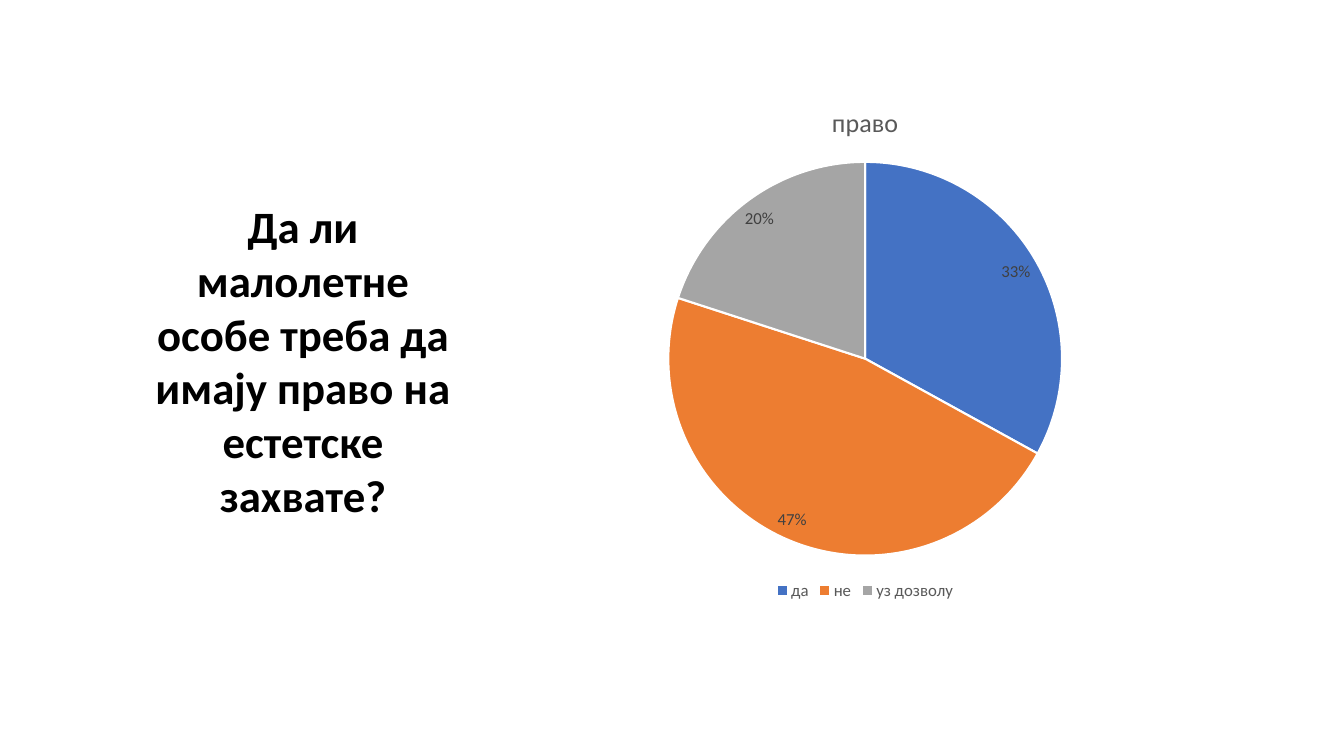
from dataclasses import dataclass

from pptx import Presentation
from pptx import util as u
from pptx.chart.data import CategoryChartData
from pptx.dml.color import RGBColor
from pptx.enum import chart as charts, text


@dataclass(frozen=True)
class Theme:
    font: str = "Calibri"
    ink: str = "000000"
    muted: str = "595959"
    label: str = "404040"
    border: str = "FFFFFF"
    slices: tuple = ("4472C4", "ED7D31", "A5A5A5")
    question_size: float = 32
    title_size: float = 18.6
    chart_size: float = 12


THEME = Theme()


def style_font(font, size, color, bold=False):
    font.name = THEME.font
    font.size = u.Pt(size)
    font.bold = bold
    font.color.rgb = RGBColor.from_string(color)


def add_text(page, content, *, left, top, width, height, size, color, bold=False,
             align=text.PP_ALIGN.LEFT):
    box = page.shapes.add_textbox(u.Pt(left), u.Pt(top), u.Pt(width), u.Pt(height))
    frame = box.text_frame
    frame.word_wrap = True
    frame.auto_size = text.MSO_AUTO_SIZE.SHAPE_TO_FIT_TEXT
    para = frame.paragraphs[0]
    para.alignment = align
    span = para.add_run()
    span.text = content
    style_font(span.font, size, color, bold)


def add_pie(page, title, shares, *, left, top, width, height):
    data = CategoryChartData(number_format="0%")
    data.categories = list(shares)
    data.add_series(title, list(shares.values()))
    chart = page.shapes.add_chart(charts.XL_CHART_TYPE.PIE, u.Pt(left), u.Pt(top),
                                  u.Pt(width), u.Pt(height), data).chart
    style_font(chart.font, THEME.chart_size, THEME.muted)

    chart.has_title = True
    chart.chart_title.include_in_layout = False
    heading = chart.chart_title.text_frame
    heading.text = title
    style_font(heading.paragraphs[0].runs[0].font, THEME.title_size, THEME.muted)

    chart.has_legend = True
    chart.legend.position = charts.XL_LEGEND_POSITION.BOTTOM
    chart.legend.include_in_layout = False
    style_font(chart.legend.font, THEME.chart_size, THEME.muted)

    plot = chart.plots[0]
    plot.vary_by_categories = True
    series = plot.series[0]
    for index, color in enumerate(THEME.slices):
        look = series.points[index].format
        look.fill.solid()
        look.fill.fore_color.rgb = RGBColor.from_string(color)
        look.line.color.rgb = RGBColor.from_string(THEME.border)
        look.line.width = u.Pt(1.5)

    labels = series.data_labels
    labels.show_value = True
    labels.show_percentage = False
    labels.number_format = "0%"
    labels.number_format_is_linked = False
    labels.position = charts.XL_LABEL_POSITION.BEST_FIT
    style_font(labels.font, THEME.chart_size, THEME.label)


def main():
    deck = Presentation()
    deck.slide_width, deck.slide_height = u.Pt(960), u.Pt(540)
    page = deck.slides.add_slide(deck.slide_layouts[6])
    add_pie(page, "право", {"да": 0.33, "не": 0.47, "уз дозволу": 0.2},
            left=366, top=60, width=504, height=372)
    add_text(page, "Да ли малолетне особе треба да имају право на естетске захвате?",
             left=101.5, top=138.5, width=230, height=240, size=THEME.question_size,
             color=THEME.ink, bold=True, align=text.PP_ALIGN.CENTER)
    deck.save("out.pptx")


if __name__ == "__main__":
    main()
